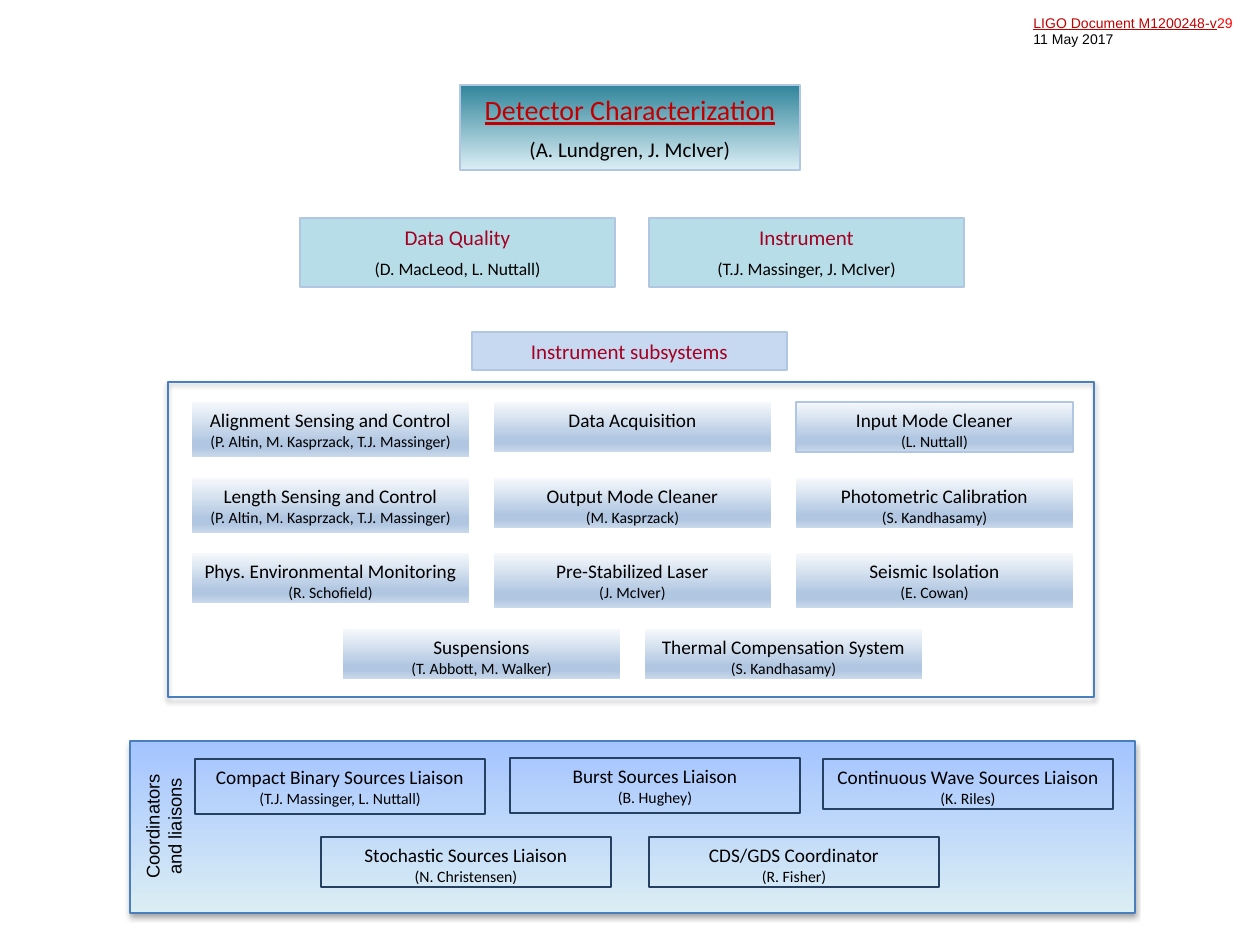
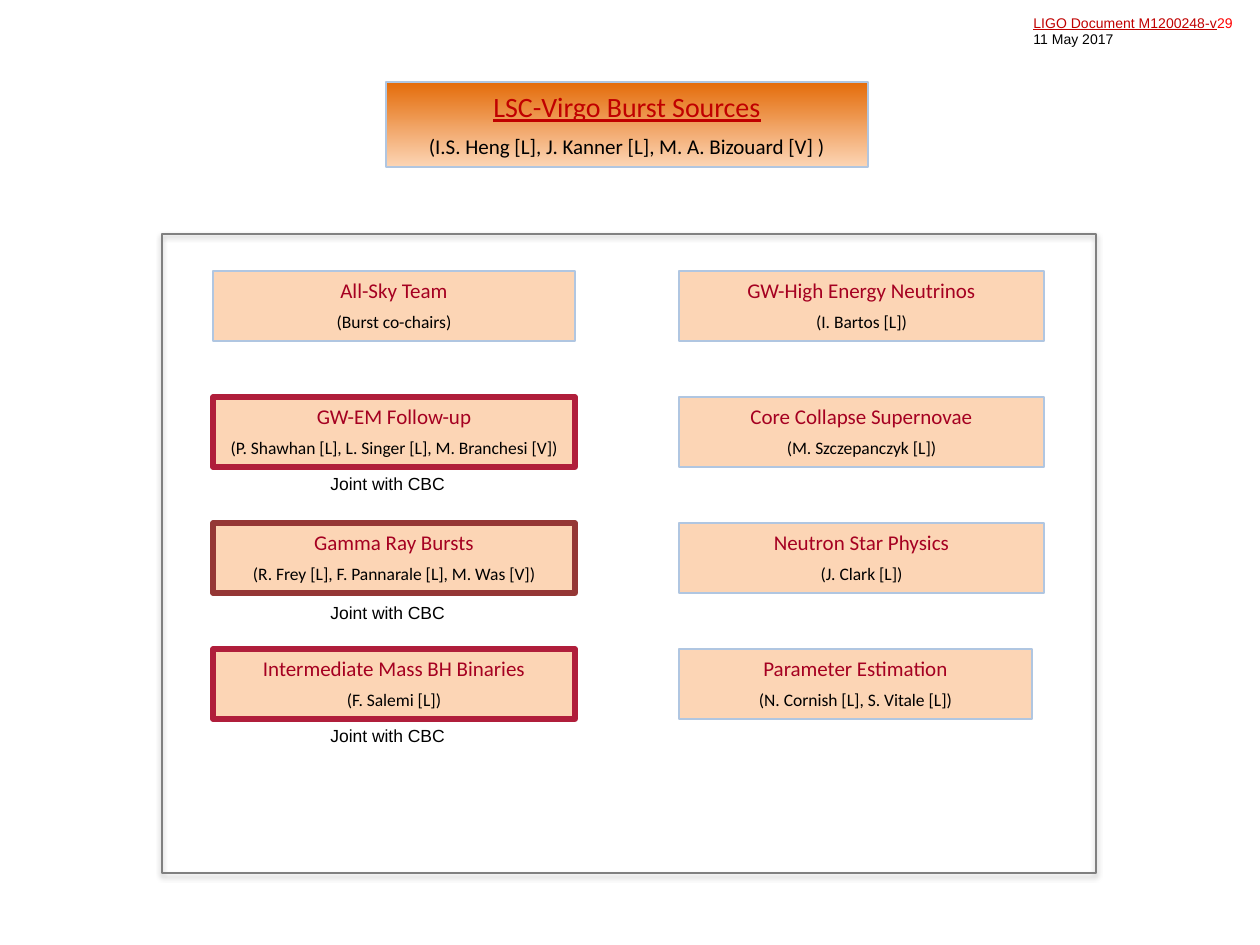
"""Build two organisation charts: detector characterization and burst sources."""
import pptx
import pptx.dml.color
import pptx.enum.shapes
import pptx.enum.text
import pptx.oxml
import pptx.oxml.ns
import pptx.util

PX_PER_INCH = 126
COLORS = {
    "black": "000000", "red": "C00000", "bright_red": "FF0000", "heading": "A50021",
    "edge": "B0C6E1", "panel_edge": "4B7EBC", "liaison_edge": "254061", "gray": "808080",
    "crimson": "B01E3B", "brick": "953735", "teal": "31859C", "pale_teal": "DBEEF4",
    "aqua": "B7DEE8", "sky": "C6D9F1", "periwinkle": "A4C4FF", "mist": "F6F9FC",
    "haze": "CAD9EB", "orange": "E46C0A", "peach": "FCD5B5",
}
TEAL_FADE = [(0, "teal"), (100, "pale_teal")]
ORANGE_FADE = [(0, "orange"), (100, "peach")]
LIAISON_FADE = [(0, "periwinkle"), (100, "pale_teal")]
SUBSYSTEM_FADE = [(0, "mist"), (74, "edge"), (83, "edge"), (100, "haze")]


def style(size, color="black", name="Calibri", underline=False):
    """Return a text style as a colour and font attributes."""
    return color, {"size": pptx.util.Pt(size), "name": name,
                   "underline": underline, "bold": False}


STYLES = {
    "title": style(16, "red", underline=True), "chairs": style(12),
    "group": style(12, "heading"), "leads": style(10),
    "unit": style(11), "members": style(9),
    "document": style(8, "red", "Arial", True), "version": style(8, "bright_red", "Arial"),
    "date": style(8, name="Arial"), "side": style(10.5, name="Arial"),
    "note": style(10, name="Arial"),
}
SPACE_BEFORE = {"chairs": 6, "leads": 5}
CENTER = pptx.enum.text.PP_ALIGN.CENTER
LEFT = pptx.enum.text.PP_ALIGN.LEFT


def px(*lengths):
    """Turn px lengths into EMU."""
    return [pptx.util.Emu(round(n * 914400 / PX_PER_INCH)) for n in lengths]


def rgb(color):
    """Look up a named colour."""
    return pptx.dml.color.RGBColor.from_string(COLORS[color])


def set_format(target, values):
    """Set each attribute in values on target."""
    for attribute, value in values.items():
        setattr(target, attribute, value)


def write(shape, paragraphs, align=CENTER, **frame_format):
    """Write paragraphs, each a list of (text, style name) runs."""
    frame = shape.text_frame
    set_format(frame, {"word_wrap": True, "auto_size": pptx.enum.text.MSO_AUTO_SIZE.NONE,
                       "vertical_anchor": pptx.enum.text.MSO_ANCHOR.TOP, **frame_format})
    for index, runs in enumerate(paragraphs):
        paragraph = frame.add_paragraph() if index else frame.paragraphs[0]
        space = SPACE_BEFORE.get(runs[0][1], 0)
        set_format(paragraph, {"alignment": align, "space_before": pptx.util.Pt(space)})
        for text, style_name in runs:
            run = paragraph.add_run()
            run.text = text
            color, font_format = STYLES[style_name]
            set_format(run.font, font_format)
            run.font.color.rgb = rgb(color)


def fade(shape, stops):
    """Fill a shape with a top-to-bottom gradient."""
    shape.fill.gradient()
    shape.fill.gradient_angle = 270
    stop_list = shape.fill._fill._gradFill.find(pptx.oxml.ns.qn("a:gsLst"))
    for stop in list(stop_list):
        stop_list.remove(stop)
    for position, color in stops:
        stop_list.append(pptx.oxml.parse_xml(
            f'<a:gs {pptx.oxml.ns.nsdecls("a")} pos="{position * 1000}">'
            f'<a:srgbClr val="{COLORS[color]}"/></a:gs>'))


def paint(shape, fill, edge, weight=1):
    """Apply a flat, gradient or empty fill and an optional edge."""
    if isinstance(fill, list):
        fade(shape, fill)
    elif fill:
        shape.fill.solid()
        shape.fill.fore_color.rgb = rgb(fill)
    else:
        shape.fill.background()
    if edge:
        shape.line.color.rgb = rgb(edge)
        shape.line.width = pptx.util.Pt(weight)
    else:
        shape.line.fill.background()


def add_box(slide, bounds, fill, edge, weight=1):
    """Add a painted rectangle without shadow."""
    box = slide.shapes.add_shape(pptx.enum.shapes.MSO_SHAPE.RECTANGLE, *px(*bounds))
    box.shadow.inherit = False
    paint(box, fill, edge, weight)
    return box


def add_panel(slide, bounds, fill, edge, weight=1):
    """Add a rectangle with a soft shadow below it."""
    panel = add_box(slide, bounds, fill, edge, weight)
    effects = panel._element.spPr.find(pptx.oxml.ns.qn("a:effectLst"))
    effects.append(pptx.oxml.parse_xml(
        f'<a:outerShdw {pptx.oxml.ns.nsdecls("a")} blurRad="39370" dist="22860" '
        'dir="5400000" rotWithShape="0"><a:srgbClr val="000000">'
        '<a:alpha val="35000"/></a:srgbClr></a:outerShdw>'))


def add_entry(slide, bounds, names, styles, fill, edge, weight=1):
    """Add a box with a heading and, where known, its people."""
    box = add_box(slide, bounds, fill, edge, weight)
    write(box, [[line] for line in zip(names, styles)])


def add_group(slide, bounds, names, fill, edge="edge", weight=1):
    """Add a working group box."""
    add_entry(slide, bounds, names, ("group", "leads"), fill, edge, weight)


def add_unit(slide, bounds, names, fill=None, edge=None):
    """Add a subsystem or liaison box."""
    add_entry(slide, bounds, names, ("unit", "members"), fill, edge)


def add_label(slide, bounds, paragraphs, align=CENTER, **frame_format):
    """Add a plain text label."""
    label = slide.shapes.add_textbox(*px(*bounds))
    write(label, paragraphs, align, **frame_format)
    return label


def start_slide(deck, bounds, title, chairs, fill):
    """Add a slide with its title box and document reference."""
    slide = deck.slides.add_slide(deck.slide_layouts[5])
    heading = slide.shapes.title
    set_format(heading, dict(zip(("left", "top", "width", "height"), px(*bounds))))
    paint(heading, fill, "edge")
    write(heading, [[(title, "title")], [(chairs, "chairs")]],
          vertical_anchor=pptx.enum.text.MSO_ANCHOR.MIDDLE)
    add_label(slide, (1021, 8, 232, 47),
              [[("LIGO Document M1200248-v", "document"), ("29", "version")],
               [("11 May 2017", "date")]], LEFT)
    return slide


def add_subsystems(slide):
    """Add the instrument subsystems in three columns and a centred last row."""
    add_group(slide, (472, 332, 315, 38), ["Instrument subsystems"], "sky")
    add_panel(slide, (168, 382, 926, 315), None, "panel_edge")
    rows = [
        (192, [("Alignment Sensing and Control", "(P. Altin, M. Kasprzack, T.J. Massinger)"),
               ("Data Acquisition",),
               ("Input Mode Cleaner", "(L. Nuttall)")]),
        (192, [("Length Sensing and Control", "(P. Altin, M. Kasprzack, T.J. Massinger)"),
               ("Output Mode Cleaner", "(M. Kasprzack)"),
               ("Photometric Calibration", "(S. Kandhasamy)")]),
        (192, [("Phys. Environmental Monitoring", "(R. Schofield)"),
               ("Pre-Stabilized Laser", "(J. McIver)"),
               ("Seismic Isolation", "(E. Cowan)")]),
        (343, [("Suspensions", "(T. Abbott, M. Walker)"),
               ("Thermal Compensation System", "(S. Kandhasamy)")]),
    ]
    tall = {(0, 0), (1, 0), (2, 1), (2, 2)}
    for row, (left, units) in enumerate(rows):
        for column, names in enumerate(units):
            height = 55 if (row, column) in tall else 50
            edge = "edge" if names[0] == "Input Mode Cleaner" else None
            add_unit(slide, (left + 302 * column, 402 + round(75.6 * row), 277, height),
                     names, SUBSYSTEM_FADE, edge)


def add_liaisons(slide):
    """Add the coordinators and liaisons panel."""
    add_panel(slide, (130, 741, 1005, 172), LIAISON_FADE, "panel_edge", 0.75)
    side = add_label(slide, (77, 798, 173, 57),
                     [[("Coordinators", "side")], [("and liaisons", "side")]])
    side.rotation = 270
    for left, top, height, *names in [
        (195, 759, 55, "Compact Binary Sources Liaison", "(T.J. Massinger, L. Nuttall)"),
        (510, 758, 55, "Burst Sources Liaison", "(B. Hughey)"),
        (823, 759, 50, "Continuous Wave Sources Liaison", "(K. Riles)"),
        (321, 837, 50, "Stochastic Sources Liaison", "(N. Christensen)"),
        (649, 837, 50, "CDS/GDS Coordinator", "(R. Fisher)"),
    ]:
        add_unit(slide, (left, top, 290, height), names, edge="liaison_edge")


def build_detector_slide(deck):
    """Build the detector characterization chart."""
    slide = start_slide(deck, (460, 85, 340, 85), "Detector Characterization",
                        "(A. Lundgren, J. McIver)", TEAL_FADE)
    for left, *names in [(300, "Data Quality", "(D. MacLeod, L. Nuttall)"),
                         (649, "Instrument", "(T.J. Massinger, J. McIver)")]:
        add_group(slide, (left, 218, 315, 69), names, "aqua")
    add_subsystems(slide)
    add_liaisons(slide)


def build_burst_slide(deck):
    """Build the burst sources chart."""
    slide = start_slide(deck, (386, 82, 482, 85), "LSC-Virgo Burst Sources",
                        "(I.S. Heng [L], J. Kanner [L], M. A. Bizouard [V] )", ORANGE_FADE)
    add_panel(slide, (162, 234, 934, 639), None, "gray")
    joint_teams = [
        ("edge", 1, "All-Sky Team", "(Burst co-chairs)"),
        ("crimson", 3, "GW-EM Follow-up", "(P. Shawhan [L], L. Singer [L], M. Branchesi [V])"),
        ("brick", 3, "Gamma Ray Bursts", "(R. Frey [L], F. Pannarale [L], M. Was [V])"),
        ("crimson", 3, "Intermediate Mass BH Binaries", "(F. Salemi [L])"),
    ]
    burst_teams = [
        (365, "GW-High Energy Neutrinos", "(I. Bartos [L])"),
        (365, "Core Collapse Supernovae", "(M. Szczepanczyk [L])"),
        (365, "Neutron Star Physics", "(J. Clark [L])"),
        (353, "Parameter Estimation", "(N. Cornish [L], S. Vitale [L])"),
    ]
    for row, (joint_team, burst_team) in enumerate(zip(joint_teams, burst_teams)):
        top = 271 + 126 * row
        edge, weight, *joint_names = joint_team
        width, *burst_names = burst_team
        add_group(slide, (213, top, 362, 70), joint_names, "peach", edge, weight)
        add_group(slide, (679, top, width, 70), burst_names, "peach")
    for top in (467, 596, 719):
        add_label(slide, (318, top, 146, 34), [[("Joint with CBC", "note")]],
                  LEFT, word_wrap=False)


def main():
    """Build and save both slides."""
    deck = pptx.Presentation()
    deck.slide_width, deck.slide_height = px(1260, 945)
    build_detector_slide(deck)
    build_burst_slide(deck)
    deck.save("out.pptx")


if __name__ == "__main__":
    main()
